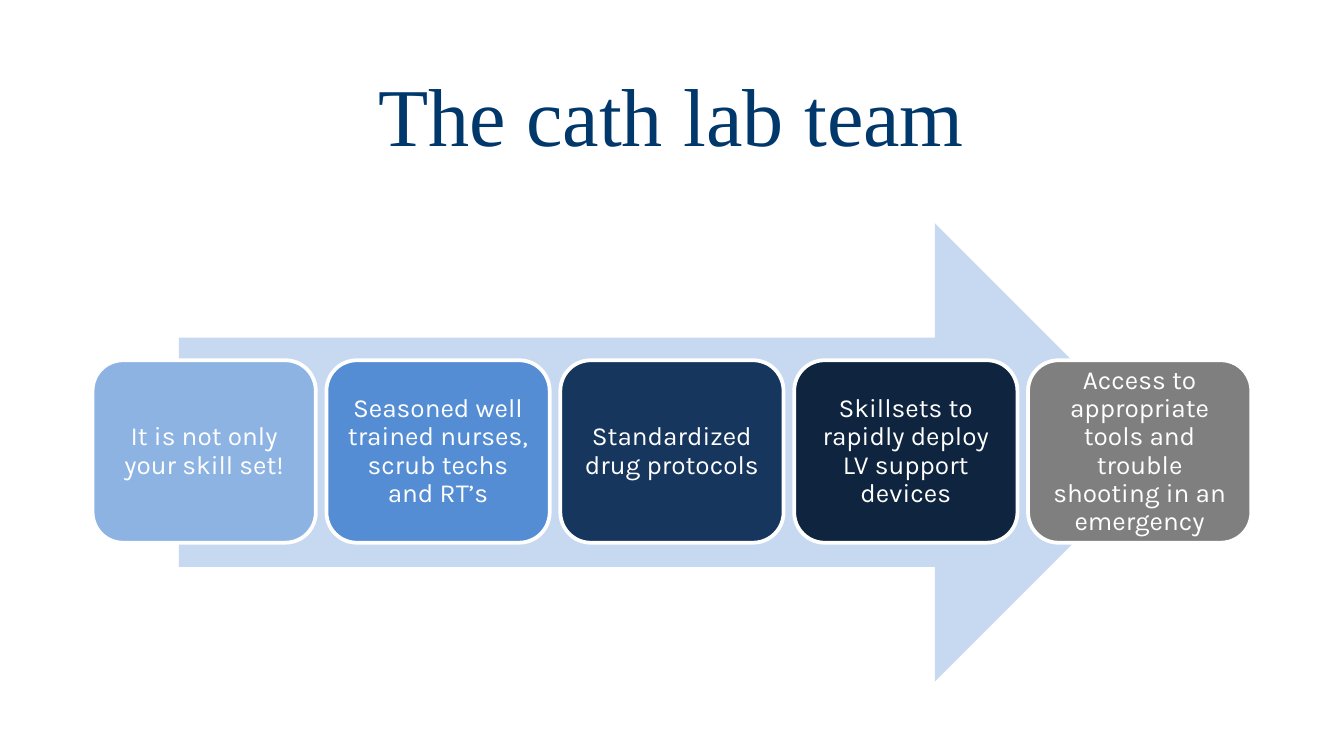
from dataclasses import dataclass

from pptx import Presentation
from pptx.dml.color import RGBColor
from pptx.enum.shapes import MSO_SHAPE
from pptx.enum.text import MSO_ANCHOR, MSO_AUTO_SIZE, PP_ALIGN
from pptx.shapes.autoshape import Shape
from pptx.slide import Slide
from pptx.util import Cm, Pt


@dataclass(frozen=True)
class Theme:
    title_color: str = "00386B"
    arrow_color: str = "C6D9F0"
    white: str = "FFFFFF"
    title_font: str = "Times New Roman"
    card_font: str = "Karla"
    title_size: float = 44
    card_size: float = 14
    card_line: float = 2


@dataclass(frozen=True)
class Card:
    text: str
    fill: str


THEME = Theme()
CARDS = [
    Card("It is not only your skill set!", "8DB3E2"),
    Card("Seasoned well trained nurses, scrub techs and RT’s", "548DD4"),
    Card("Standardized drug protocols", "17365D"),
    Card("Skillsets to rapidly deploy LV support devices", "0F243E"),
    Card("Access to appropriate tools and trouble shooting in an emergency", "7F7F7F"),
]
CARD_LEFT, CARD_TOP = 1.75, 6.81
CARD_WIDTH, CARD_HEIGHT = 4.22, 3.45
CARD_PITCH = 4.42
CARD_INSET = 0.15


def set_text(sp: Shape, text: str, font: str, size: float, color: str) -> None:
    """Write one centred, vertically centred paragraph."""
    tf = sp.text_frame
    tf.text = text
    tf.word_wrap = True
    tf.auto_size = MSO_AUTO_SIZE.NONE
    tf.vertical_anchor = MSO_ANCHOR.MIDDLE
    p = tf.paragraphs[0]
    p.alignment = PP_ALIGN.CENTER
    r = p.runs[0]
    r.font.name = font
    r.font.size = Pt(size)
    r.font.color.rgb = RGBColor.from_string(color)


def add_title(s: Slide, text: str) -> None:
    sp = s.shapes.title
    sp.left, sp.top, sp.width, sp.height = Cm(1.73), Cm(0.76), Cm(21.92), Cm(2.77)
    set_text(sp, text, THEME.title_font, THEME.title_size, THEME.title_color)


def add_filled_shape(s: Slide, kind: MSO_SHAPE, left: float, top: float,
                     width: float, height: float, fill: str) -> Shape:
    sp = s.shapes.add_shape(kind, Cm(left), Cm(top), Cm(width), Cm(height))
    sp.shadow.inherit = False
    sp.fill.solid()
    sp.fill.fore_color.rgb = RGBColor.from_string(fill)
    sp.line.fill.background()
    return sp


def add_card(s: Slide, index: int, card: Card) -> None:
    sp = add_filled_shape(s, MSO_SHAPE.ROUNDED_RECTANGLE,
                          CARD_LEFT + index * CARD_PITCH, CARD_TOP,
                          CARD_WIDTH, CARD_HEIGHT, card.fill)
    sp.line.color.rgb = RGBColor.from_string(THEME.white)
    sp.line.width = Pt(THEME.card_line)
    set_text(sp, card.text, THEME.card_font, THEME.card_size, THEME.white)
    tf = sp.text_frame
    tf.margin_left = tf.margin_right = Cm(CARD_INSET)
    tf.margin_top = tf.margin_bottom = Cm(CARD_INSET)
    tf.paragraphs[0].line_spacing = 0.9


def main() -> None:
    prs = Presentation()
    prs.slide_width, prs.slide_height = Cm(25.4), Cm(14.29)
    s = prs.slides.add_slide(prs.slide_layouts.get_by_name("Title Only"))
    add_title(s, "The cath lab team")
    add_filled_shape(s, MSO_SHAPE.RIGHT_ARROW, 3.38, 4.22, 18.62, 8.66,
                     THEME.arrow_color)
    for i, card in enumerate(CARDS):
        add_card(s, i, card)
    prs.save("out.pptx")


if __name__ == "__main__":
    main()
